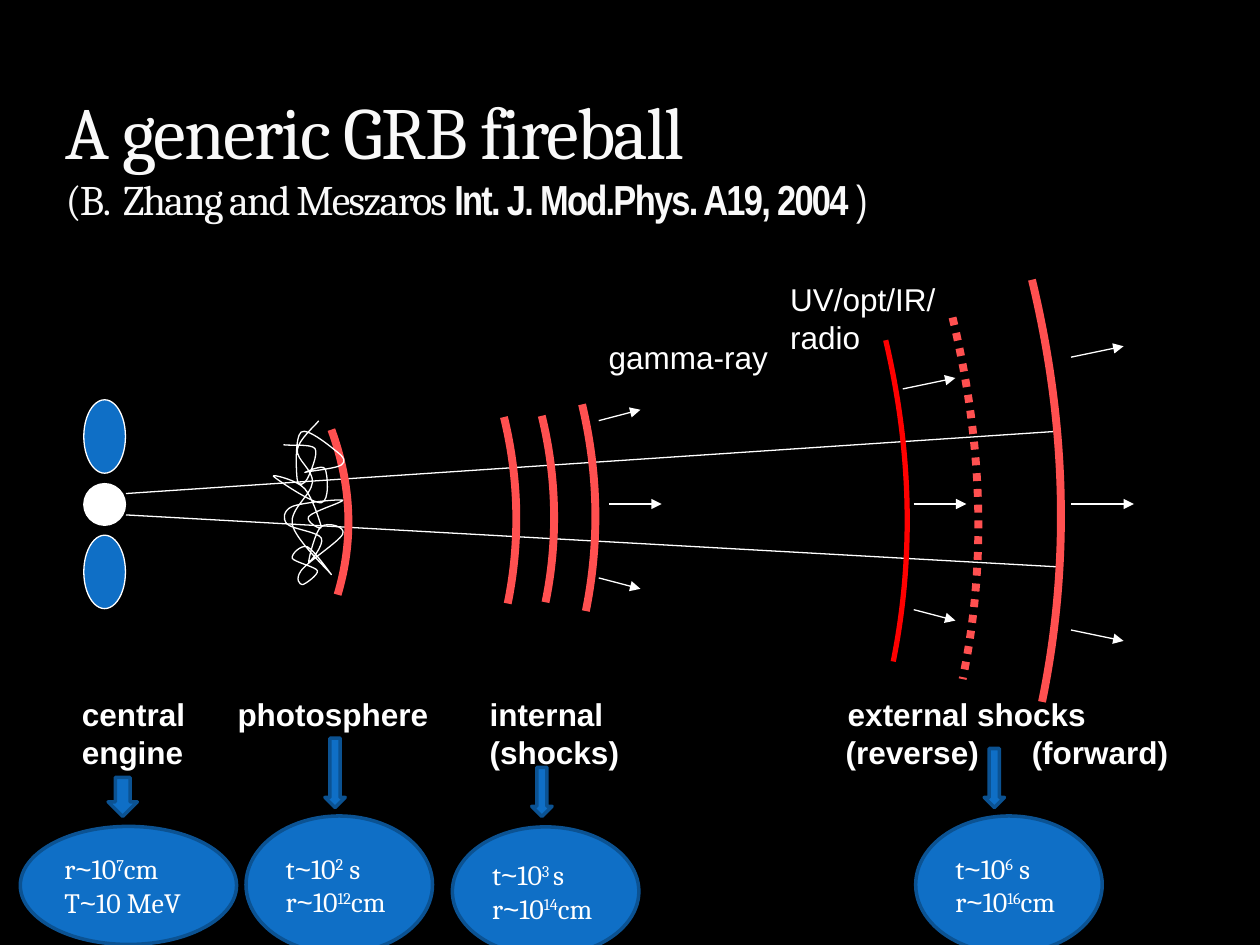
import pptx
import pptx.util
import pptx.dml.color
import pptx.enum.dml
import pptx.enum.shapes
import pptx.enum.text
from lxml import etree
from pptx.oxml.ns import qn

Cm, Pt = pptx.util.Cm, pptx.util.Pt
PRESET = pptx.enum.shapes.MSO_SHAPE
STRAIGHT = pptx.enum.shapes.MSO_CONNECTOR.STRAIGHT
ANCHOR = pptx.enum.text.MSO_ANCHOR
LEFT = pptx.enum.text.PP_ALIGN.LEFT
COLORS = {
    name: pptx.dml.color.RGBColor.from_string(value)
    for name, value in {
        "space": "000000", "white": "FFFFFF", "title": "F9F9F9", "blue": "0F6FC6",
        "edge": "0B5292", "shock": "FF5050", "reverse": "FF0000",
    }.items()
}
CURVE_UNIT = Cm(2.54) / 100  # curves are plotted on a grid of 1/100 inch
AXIS = 10.16  # height of the jet axis

deck = pptx.Presentation()
deck.slide_width, deck.slide_height = Cm(25.4), Cm(19.05)
slide = deck.slides.add_slide(deck.slide_layouts[5])
slide.background.fill.solid()
slide.background.fill.fore_color.rgb = COLORS["space"]


def add_text(paragraph, words, color="white", **formats):
    run = paragraph.add_run()
    run.text = words
    run.font.color.rgb = COLORS[color]
    for attribute, value in formats.items():
        setattr(run.font, attribute, value)
    return run


def add_curve(points, color, width):
    """Draw chained cubic Béziers: a start, then two controls and an end each."""
    builder = slide.shapes.build_freeform(*points[0], scale=CURVE_UNIT)
    builder.add_line_segments(points[1:], close=False)
    curve = builder.convert_to_shape()
    segments = curve._element.findall(".//" + qn("a:lnTo"))
    for first in range(0, len(segments), 3):
        bezier = etree.Element(qn("a:cubicBezTo"))
        segments[first].addprevious(bezier)
        for segment in segments[first:first + 3]:
            bezier.append(segment[0])
            segment.getparent().remove(segment)
    curve.fill.background()
    curve.line.color.rgb = COLORS[color]
    curve.line.width = Pt(width)
    curve.shadow.inherit = False
    return curve


# Title and reference
title = slide.shapes.title
title.left, title.top, title.width, title.height = Cm(1.07), Cm(1.47), Cm(23.29), Cm(3.18)
title.text_frame.vertical_anchor = ANCHOR.BOTTOM
heading = title.text_frame.paragraphs[0]
heading.alignment = LEFT
for words, size, font, bold in [
    ("A generic GRB fireball", 42, "Cambria", False),
    ("(B.  Zhang and Meszaros ", 24, "Cambria", False),
    ("Int. J. Mod.Phys. A19, 2004 ", 24, "Arial Narrow", True),
    (")", 24, "Arial Narrow", False),
]:
    run = add_text(heading, words, "title", size=Pt(size), name=font, bold=bold)
    run._r.get_or_add_rPr().set("spc", "-100")
    if size == 42:
        heading.add_line_break()

# Central engine, data bubbles and the arrows to them
solids = [
    (PRESET.OVAL, 1.69, top, 0.84, height, fill, "white", 0.75, [])
    for top, height, fill in [(9.75, 0.84, "white"), (8.06, 1.48, "blue"), (10.79, 1.48, "blue")]
]
solids += [
    (PRESET.OVAL, *box, "blue", "edge", 2, formulas)
    for *box, formulas in [
        (0.41, 16.66, 4.36, 2.38, [("r", "10", "7", "cm"), ("T", "10 MeV", "", "")]),
        (4.96, 16.45, 3.76, 2.77, [("t", "10", "2", " s"), ("r", "10", "12", "cm")]),
        (9.12, 16.67, 3.76, 2.6, [("t", "10", "3 ", "s"), ("r", "10", "14", "cm")]),
        (18.46, 16.45, 3.76, 2.77, [("t", "10", "6", " s"), ("r", "10", "16", "cm")]),
    ]
]
solids += [
    (PRESET.DOWN_ARROW, *box, "blue", "edge", 2, [])
    for box in [
        (2.18, 15.67, 0.59, 0.79), (6.55, 14.88, 0.41, 1.4),
        (10.72, 15.47, 0.41, 0.99), (19.84, 15.09, 0.41, 1.19),
    ]
]
for preset, left, top, width, height, fill, edge, weight, formulas in solids:
    solid = slide.shapes.add_shape(preset, Cm(left), Cm(top), Cm(width), Cm(height))
    solid.shadow.inherit = False
    solid.fill.solid()
    solid.fill.fore_color.rgb = COLORS[fill]
    solid.line.color.rgb = COLORS[edge]
    solid.line.width = Pt(weight)
    frame = solid.text_frame
    frame.vertical_anchor = ANCHOR.MIDDLE
    for row, (symbol, number, exponent, unit) in enumerate(formulas):
        formula = frame.add_paragraph() if row else frame.paragraphs[0]
        formula.alignment = LEFT
        for words, font, baseline in [
            (symbol, "Cambria", 0), ("~", "Arial", 0), (number, "Cambria", 0),
            (exponent, "Cambria", 30000), (unit, "Cambria", 0),
        ]:
            if words:
                run = add_text(formula, words, size=Pt(16), name=font)
                run._r.get_or_add_rPr().set("baseline", str(baseline))

# Jet edges without heads, then emission arrows: start, run, rise
rays = [(2.54, 9.95, 18.84, -1.26, False), (2.54, 10.38, 18.84, 1.05, False)]
for upper, lower, middle in [
    ((12.07, 8.48, 0.84), (12.07, 11.65, 0.84), (12.28, AXIS, 1.06)),
    ((18.2, 7.84, 1.06), (18.42, 12.29, 0.84), (18.42, AXIS, 1.06)),
    ((21.59, 7.2, 1.06), (21.59, 12.7, 1.06), (21.59, AXIS, 1.27)),
]:
    rays += [(*upper, -0.22, True), (*lower, 0.22, True), (*middle, 0, True)]
for x, y, reach, rise, headed in rays:
    ray = slide.shapes.add_connector(STRAIGHT, Cm(x), Cm(y), Cm(x + reach), Cm(y + rise))
    ray.line.color.rgb = COLORS["white"]
    ray.line.width = Pt(0.75)
    if headed:
        etree.SubElement(ray.line._get_or_add_ln(), qn("a:tailEnd"), type="triangle")
    etree.SubElement(ray._element.spPr, qn("a:effectLst"))

# Shock fronts bulge outwards in proportion to their height
for x, top, end_x, bottom, bulge, color, width, dotted in [
    (263, 341, 268, 472, 0.12, "shock", 4.5, False),
    (400, 331, 403, 479, 0.08, "shock", 4.5, False),
    (430, 330, 433, 478, 0.08, "shock", 4.5, False),
    (462, 321, 465, 485, 0.08, "shock", 4.5, False),
    (703, 270, 709, 525, 0.08, "reverse", 3, False),
    (756, 252, 764, 539, 0.08, "shock", 4.5, True),
    (819, 222, 827, 557, 0.08, "shock", 4.5, False),
]:
    height = bottom - top
    controls = [
        (x + bulge * height, top + height / 3),
        (end_x + 0.85 * bulge * height, bottom - height / 3),
    ]
    front = add_curve([(x, top), *controls, (end_x, bottom)], color, width)
    if dotted:
        front.line.dash_style = pptx.enum.dml.MSO_LINE.ROUND_DOT

# Tangled photosphere: a smooth curve through a few knots
knots = [
    (225, 353), (250, 356), (244, 380), (236, 381), (239, 343), (268, 359), (271, 369),
    (242, 375), (258, 372), (255, 399), (217, 378), (242, 388), (255, 418), (245, 410),
    (272, 397), (232, 402), (228, 416), (255, 427), (245, 446), (255, 418), (272, 424),
    (239, 453), (240, 464), (252, 453), (232, 443), (244, 434), (263, 456), (232, 416),
    (248, 383), (236, 357), (253, 334),
]
tangle = [knots[0]]
padded = [knots[0], *knots, knots[-1]]
for before, start, end, after in zip(padded, padded[1:], padded[2:], padded[3:]):
    tangle += [
        tuple(s + (e - b) / 6 for b, s, e in zip(before, start, end)),
        tuple(e - (a - s) / 6 for s, e, a in zip(start, end, after)),
        end,
    ]
add_curve(tangle, "white", 0.75)

# Radiation labels and stage names, the latter lined up by tab stops
stage_rows = [
    ("central\tphotosphere\tinternal\texternal shocks", [3.14, 8.22, 15.44]),
    ("engine\t(shocks)\t(reverse)\t(forward)", [8.22, 15.4, 19.15]),
]
for left, top, width, height, bold, rows in [
    (12.02, 6.68, 3.73, 1.01, False, [("gamma-ray", [])]),
    (15.68, 5.52, 4.84, 1.01, False, [("UV/opt/IR/radio", [])]),
    (1.4, 13.89, 22.43, 1.79, True, stage_rows),
]:
    label = slide.shapes.add_textbox(Cm(left), Cm(top), Cm(width), Cm(height)).text_frame
    label.word_wrap = bold
    for row, (words, stops) in enumerate(rows):
        line = label.add_paragraph() if row else label.paragraphs[0]
        add_text(line, words, size=Pt(18), name="Arial", bold=bold)
        if stops:
            tabs = etree.SubElement(line._p.get_or_add_pPr(), qn("a:tabLst"))
            for stop in stops:
                etree.SubElement(tabs, qn("a:tab"), pos=str(Cm(stop)), algn="l")

deck.save("out.pptx")
